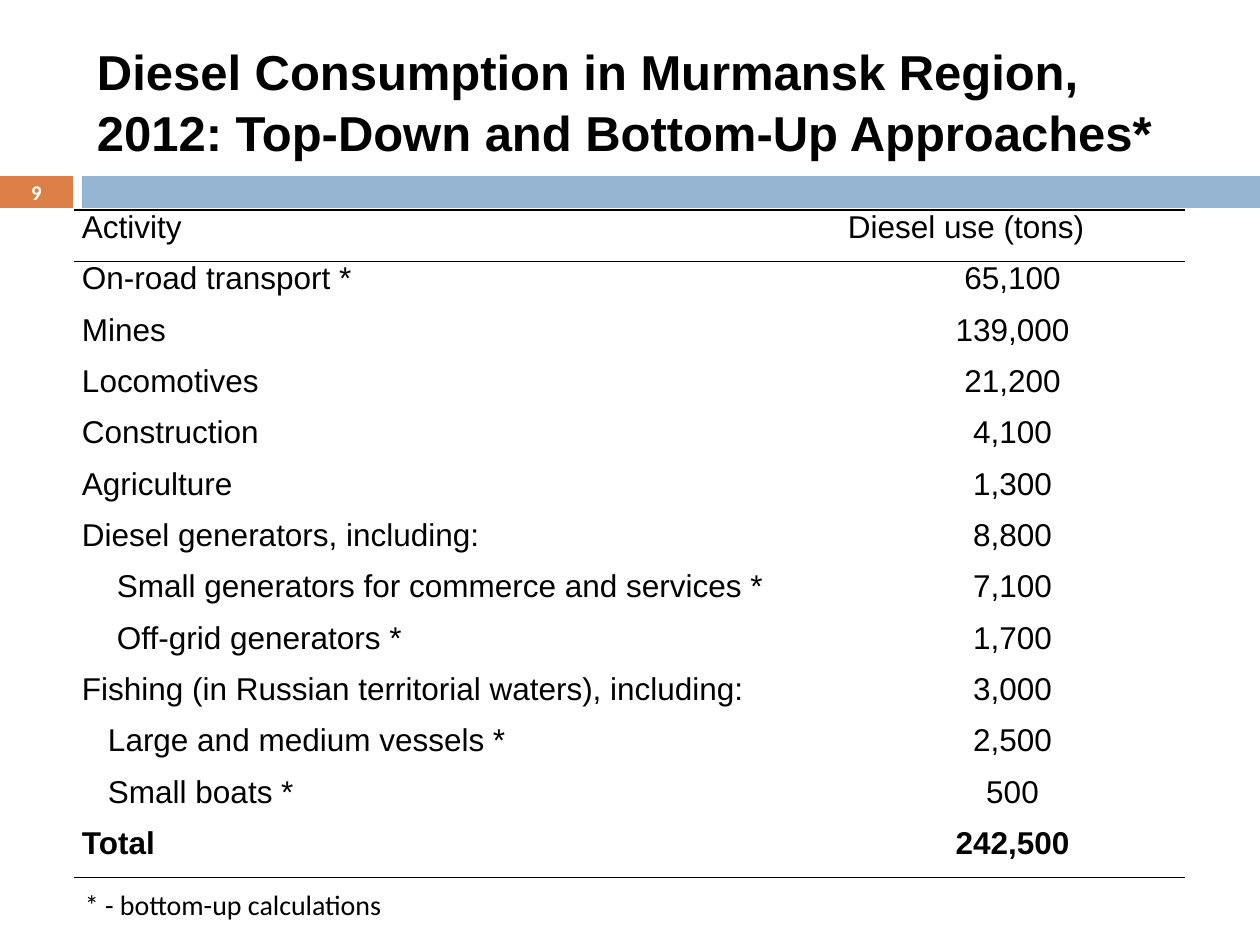
from dataclasses import dataclass
from typing import NamedTuple

from lxml import etree
from pptx import Presentation
from pptx.dml.color import RGBColor
from pptx.enum.shapes import MSO_SHAPE
from pptx.enum.text import MSO_ANCHOR, PP_ALIGN
from pptx.oxml.ns import qn
from pptx.util import Pt

RECT = MSO_SHAPE.RECTANGLE
LEFT, MID = PP_ALIGN.LEFT, PP_ALIGN.CENTER
TOP, CENTER = MSO_ANCHOR.TOP, MSO_ANCHOR.MIDDLE
SIDES = ("L", "R", "T", "B")


def px(n: int) -> int:
    return round(n * 914400 / 126)


class Font(NamedTuple):
    name: str
    size: float
    color: str
    bold: bool = False


@dataclass(frozen=True)
class Theme:
    orange: str = "DD8047"
    blue: str = "94B6D2"
    rule: str = "000000"
    rule_pt: float = 1
    title: Font = Font("Arial", 28, "000000", True)
    page: Font = Font("Calibri", 11.9, "FFFFFF", True)
    body: Font = Font("Arial", 18, "000000")
    total: Font = Font("Arial", 18, "000000", True)
    note: Font = Font("Calibri", 16, "000000")


class Box(NamedTuple):
    x: int
    y: int
    w: int
    h: int

    def emu(self) -> list[int]:
        return [px(n) for n in self]


class Bar(NamedTuple):
    box: Box
    color: str


class Label(NamedTuple):
    text: str
    box: Box
    font: Font
    align: PP_ALIGN = LEFT
    anchor: MSO_ANCHOR = CENTER
    inset: int = 13
    spacing: float = 1


class Row(NamedTuple):
    name: str
    tons: str
    indent: int = 0


THEME = Theme()
BARS = (
    Bar(Box(0, 176, 73, 32), THEME.orange),
    Bar(Box(82, 176, 1178, 32), THEME.blue),
)
LABELS = (
    Label("Diesel Consumption in Murmansk Region, 2012: "
          "Top-Down and Bottom-Up Approaches*",
          Box(84, 32, 1124, 136), THEME.title, spacing=1.05),
    Label("9", Box(0, 175, 73, 34), THEME.page, MID, inset=0),
    Label("* - bottom-up calculations", Box(72, 882, 389, 47), THEME.note,
          anchor=TOP),
)
GRID = Box(74, 210, 1111, 668)
COLS = (766, 345)
PAD = 8
ROWS = (
    Row("Activity", "Diesel use (tons)"),
    Row("On-road transport *", "65,100"),
    Row("Mines", "139,000"),
    Row("Locomotives", "21,200"),
    Row("Construction", "4,100"),
    Row("Agriculture", "1,300"),
    Row("Diesel generators, including:", "8,800"),
    Row("Small generators for commerce and services *", "7,100", 35),
    Row("Off-grid generators *", "1,700", 35),
    Row("Fishing (in Russian territorial waters), including:", "3,000"),
    Row("Large and medium vessels *", "2,500", 26),
    Row("Small boats *", "500", 26),
    Row("Total", "242,500"),
)


def write(frame, text: str, font: Font, align: PP_ALIGN) -> None:
    frame.text = text
    for para in frame.paragraphs:
        para.alignment = align
        for run in para.runs:
            face = run.font
            face.name, face.size, face.bold = font.name, Pt(font.size), font.bold
            face.color.rgb = RGBColor.from_string(font.color)


def draw_bar(slide, bar: Bar) -> None:
    shape = slide.shapes.add_shape(RECT, *bar.box.emu())
    shape.shadow.inherit = False
    shape.fill.solid()
    shape.fill.fore_color.rgb = RGBColor.from_string(bar.color)
    shape.line.fill.background()


def draw_label(slide, label: Label) -> None:
    frame = slide.shapes.add_textbox(*label.box.emu()).text_frame
    frame.word_wrap = True
    frame.vertical_anchor = label.anchor
    frame.margin_left = frame.margin_right = px(label.inset)
    frame.margin_top = frame.margin_bottom = px(label.inset // 2)
    write(frame, label.text, label.font, label.align)
    frame.paragraphs[0].line_spacing = label.spacing


def set_rules(cell, ruled: str) -> None:
    """Rule the sides named in ruled and clear the others."""
    props = cell._tc.get_or_add_tcPr()
    for pos, side in enumerate(SIDES):
        line = etree.Element(qn(f"a:ln{side}"), w=str(Pt(THEME.rule_pt)))
        if side in ruled:
            fill = etree.SubElement(line, qn("a:solidFill"))
            etree.SubElement(fill, qn("a:srgbClr"), val=THEME.rule)
        else:
            etree.SubElement(line, qn("a:noFill"))
        props.insert(pos, line)


def draw_table(slide, rows: tuple[Row, ...]) -> None:
    table = slide.shapes.add_table(len(rows), len(COLS), *GRID.emu()).table
    table.first_row = table.horz_banding = False
    for col, width in zip(table.columns, COLS):
        col.width = px(width)
    last = len(rows) - 1
    edges = {0: "TB", 1: "T", last: "B"}
    for i, row in enumerate(rows):
        font = THEME.total if i == last else THEME.body
        for j, text in enumerate((row.name, row.tons)):
            cell = table.cell(i, j)
            cell.margin_left = px(PAD + (0 if j else row.indent))
            cell.margin_right = px(PAD)
            cell.margin_top = cell.margin_bottom = 0
            cell.fill.background()
            set_rules(cell, edges.get(i, ""))
            write(cell.text_frame, text, font, MID if i and j else LEFT)


def main() -> None:
    deck = Presentation()
    deck.slide_width, deck.slide_height = px(1260), px(945)
    slide = deck.slides.add_slide(deck.slide_layouts[6])
    for bar in BARS:
        draw_bar(slide, bar)
    for label in LABELS:
        draw_label(slide, label)
    draw_table(slide, ROWS)
    deck.save("out.pptx")


if __name__ == "__main__":
    main()
